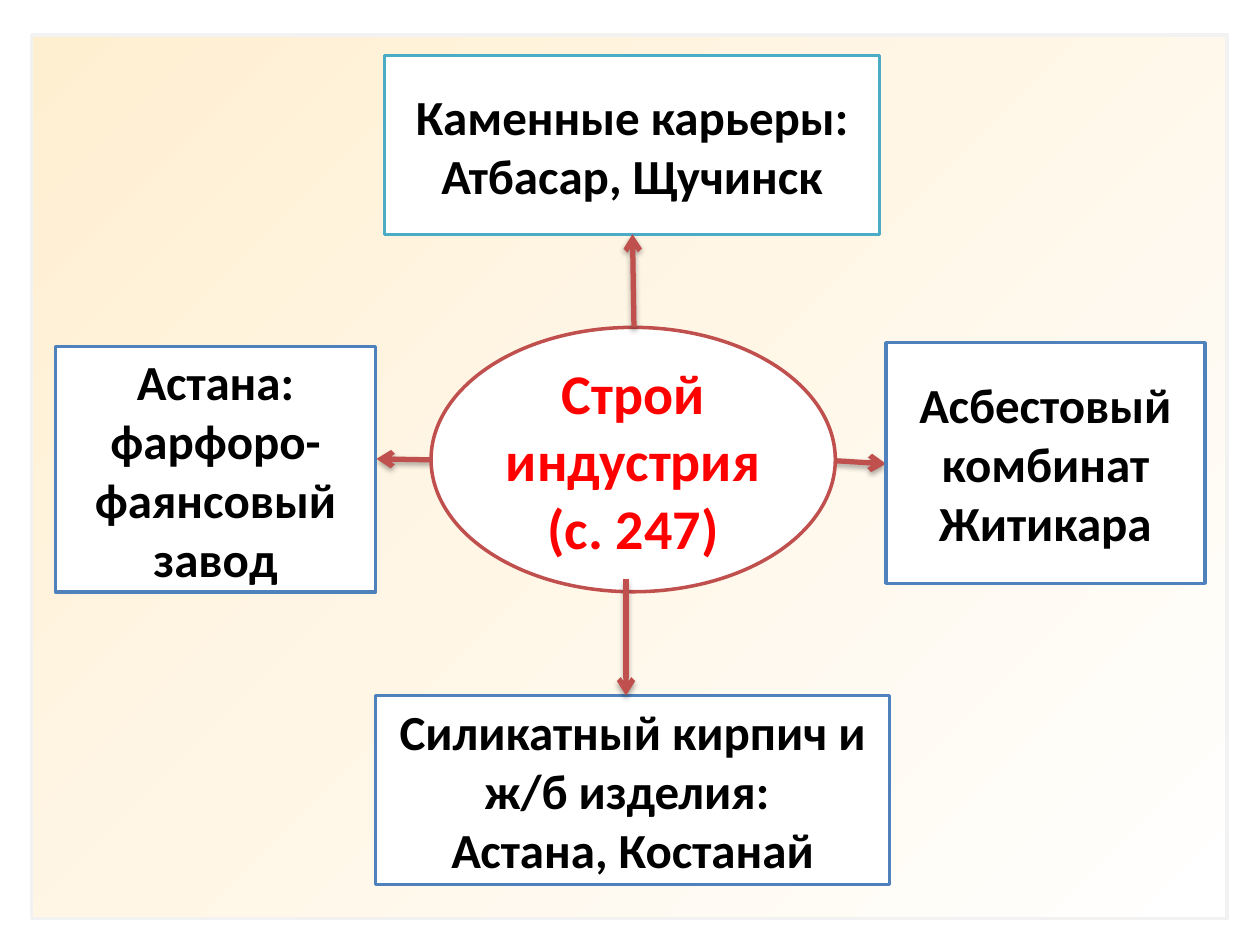
from lxml import etree
from pptx import Presentation
from pptx.dml.color import RGBColor
from pptx.enum.shapes import MSO_CONNECTOR, MSO_SHAPE
from pptx.enum.text import MSO_ANCHOR, PP_ALIGN
from pptx.oxml import parse_xml
from pptx.oxml.ns import nsdecls, qn
from pptx.util import Cm, Pt

COLORS = {
    "white": "FFFFFF", "black": "000000", "title": "FF0000",
    "frame": "F2F2F2", "teal": "4BACC6", "blue": "4F81BD", "red": "C0504D",
}
PANEL = (0.64, 0.71, 24.1, 17.81)
PANEL_STOPS = [(0, "FFEFD1"), (46, "FFF6E6"), (100, "FFFFFF")]

CENTER = ((8.69, 6.6, 8.15, 5.33), "red", ["Строй индустрия", "(с. 247)"])
BRANCHES = [
    ((7.75, 1.12, 9.98, 3.61), "teal", ["Каменные карьеры: Атбасар, Щучинск"]),
    ((17.86, 6.91, 6.43, 4.85), "blue", ["Асбестовый комбинат", "Житикара"]),
    ((1.12, 6.99, 6.45, 4.95), "blue", ["Астана: фарфоро-фаянсовый завод"]),
    ((7.57, 14.02, 10.36, 3.81), "blue",
     ["Силикатный кирпич и ж/б изделия: ", "Астана, Костанай"]),
]
SIDE_ARROWS = [(8.69, 9.27, 7.59, 9.25), (16.54, 9.27, 17.86, 9.35)]
VERTICAL_ARROWS = [(12.78, 6.6, 12.75, 4.72), (12.62, 11.68, 12.62, 14.02)]

SHADOW = (
    f'<a:effectLst {nsdecls("a")}>'
    '<a:outerShdw blurRad="40000" dist="23000" dir="5400000" rotWithShape="0">'
    '<a:srgbClr val="000000"><a:alpha val="35000"/></a:srgbClr>'
    '</a:outerShdw></a:effectLst>'
)


def rgb(name):
    return RGBColor.from_string(COLORS[name])


def add_outlined(page, kind, place, line_color):
    shape = page.shapes.add_shape(kind, *map(Cm, place))
    shape.shadow.inherit = False
    shape.line.color.rgb = rgb(line_color)
    shape.line.width = Pt(2)
    return shape


def add_panel(page):
    panel = add_outlined(page, MSO_SHAPE.RECTANGLE, PANEL, "frame")
    panel.fill.gradient()
    panel.fill.gradient_angle = 315
    stops = panel.fill._fill._gradFill.find(qn("a:gsLst"))
    for stop in list(stops):
        stops.remove(stop)
    for percent, color in PANEL_STOPS:
        stop = etree.SubElement(stops, qn("a:gs"), pos=str(percent * 1000))
        etree.SubElement(stop, qn("a:srgbClr"), val=color)


def add_label(page, kind, place, line_color, lines, size, text_color):
    box = add_outlined(page, kind, place, line_color)
    box.fill.solid()
    box.fill.fore_color.rgb = rgb("white")
    frame = box.text_frame
    frame.word_wrap = True
    frame.vertical_anchor = MSO_ANCHOR.MIDDLE
    frame.text = "\n".join(lines)
    for paragraph in frame.paragraphs:
        paragraph.alignment = PP_ALIGN.CENTER
        for span in paragraph.runs:
            span.font.name = "Calibri"
            span.font.size = Pt(size)
            span.font.bold = True
            span.font.color.rgb = rgb(text_color)


def add_arrows(page, arrows):
    for ends in arrows:
        arrow = page.shapes.add_connector(MSO_CONNECTOR.STRAIGHT, *map(Cm, ends))
        arrow.line.color.rgb = rgb("red")
        arrow.line.width = Pt(3)
        etree.SubElement(arrow.line._get_or_add_ln(), qn("a:tailEnd"), type="arrow")
        arrow._element.spPr.append(parse_xml(SHADOW))


def main():
    deck = Presentation()
    deck.slide_width, deck.slide_height = Cm(25.4), Cm(19.05)
    page = deck.slides.add_slide(deck.slide_layouts[6])
    add_panel(page)
    add_arrows(page, SIDE_ARROWS)
    add_label(page, MSO_SHAPE.OVAL, *CENTER, 32, "title")
    for branch in BRANCHES:
        add_label(page, MSO_SHAPE.RECTANGLE, *branch, 28, "black")
    add_arrows(page, VERTICAL_ARROWS)
    deck.save("out.pptx")


if __name__ == "__main__":
    main()
